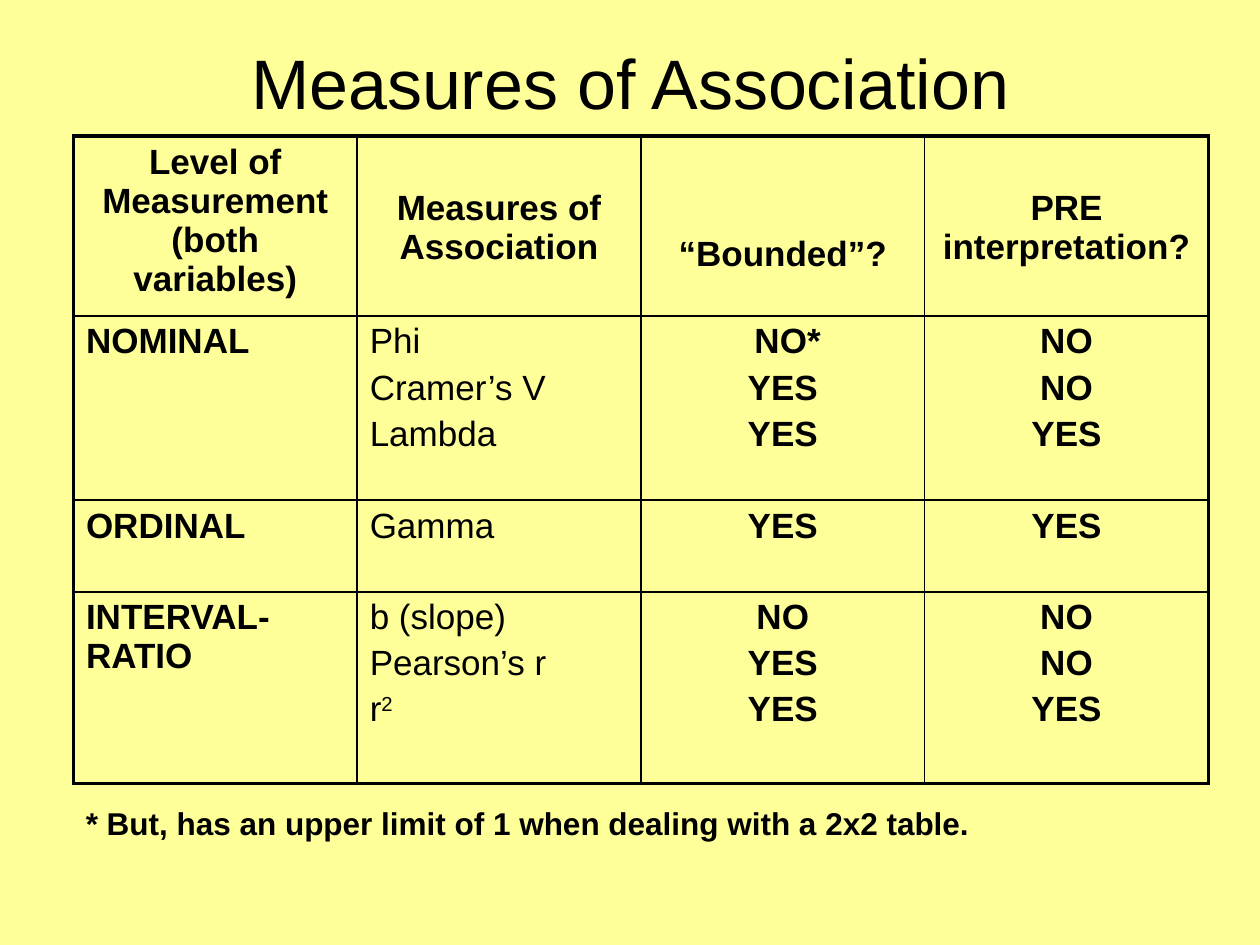
from lxml.etree import SubElement as Sub
from pptx import Presentation
from pptx.dml.color import RGBColor
from pptx.enum.text import MSO_ANCHOR as Anchor, PP_ALIGN as Align
from pptx.oxml.ns import qn
from pptx.util import Cm, Pt

HEAD = ["Level of Measurement (both variables)", "Measures of Association",
        "“Bounded”?", "PRE interpretation?"]
DROPS = [0, 1, 2, 1]  # lines by which each heading is lowered
BODY = [
    ["NOMINAL", "Phi\nCramer’s V\nLambda", " NO*\nYES\nYES", "NO\nNO\nYES"],
    ["ORDINAL", "Gamma", "YES", "YES"],
    ["INTERVAL-RATIO", "b (slope)\nPearson’s r\nr2", "NO\nYES\nYES", "NO\nNO\nYES"],
]
HEIGHTS = [3.63, 3.71, 1.85, 3.86]
WIDTH = 5.72
PITCH = 0.93  # one line and its gap


def color(code):
    return RGBColor.from_string(code)


class Deck:
    face = "Arial"
    ink = "000000"
    paper = "FFFF99"
    thin, thick = 1, 2.25

    def __init__(self):
        self.prs = Presentation()
        self.prs.slide_width, self.prs.slide_height = Cm(25.4), Cm(19.05)
        self.slide = self.prs.slides.add_slide(self.prs.slide_layouts[5])
        fill = self.slide.background.fill
        fill.solid()
        fill.fore_color.rgb = color(self.paper)

    def style(self, run, size, bold):
        font = run.font
        font.name, font.size, font.bold = self.face, Pt(size), bold
        font.color.rgb = color(self.ink)

    def label(self, frame, text, size, bold=False, align=Align.LEFT, gap=0):
        frame.text = text
        for par in frame.paragraphs:
            par.alignment = align
            par.space_before = Pt(gap)
            for run in par.runs:
                self.style(run, size, bold)

    def title(self, text, x, y, w, h):
        shape = self.slide.shapes.title
        shape.left, shape.top, shape.width, shape.height = map(Cm, (x, y, w, h))
        shape.text_frame.vertical_anchor = Anchor.MIDDLE
        self.label(shape.text_frame, text, 40, align=Align.CENTER)

    def note(self, text, x, y, w, h):
        box = self.slide.shapes.add_textbox(*map(Cm, (x, y, w, h)))
        self.label(box.text_frame, text, 18, bold=True)

    def edge(self, cell, side, width):
        props = cell._tc.get_or_add_tcPr()
        line = Sub(props, qn("a:ln" + side), w=str(Pt(width)))
        Sub(Sub(line, qn("a:solidFill")), qn("a:srgbClr"), val=self.ink)

    def table(self, rows, x, y):
        tall, wide = len(rows), len(rows[0])
        grid = self.slide.shapes.add_table(
            tall, wide, Cm(x), Cm(y), Cm(WIDTH * wide), Cm(sum(HEIGHTS))).table
        grid.first_row = grid.horz_banding = False
        for col in grid.columns:
            col.width = Cm(WIDTH)
        for i, row in enumerate(rows):
            grid.rows[i].height = Cm(HEIGHTS[i])
            for j, text in enumerate(row):
                cell = grid.cell(i, j)
                mid = i == 0 or j > 1
                self.label(cell.text_frame, text, 20, bold=i == 0 or j != 1,
                           align=Align.CENTER if mid else Align.LEFT, gap=4)
                outer = {"L": j == 0, "R": j == wide - 1,
                         "T": i == 0, "B": i == tall - 1}
                for side, out in outer.items():
                    self.edge(cell, side, self.thick if out else self.thin)
                cell.fill.background()
        return grid

    def power(self, par, size):
        """Raise the last character of a paragraph."""
        run = par.runs[0]
        base, mark = run.text[:-1], run.text[-1]
        run.text = base
        top = par.add_run()
        top.text = mark
        self.style(top, size, False)
        top._r.get_or_add_rPr().set("baseline", "30000")


def main():
    deck = Deck()
    deck.title("Measures of Association", 1.27, 0.76, 22.86, 1.78)
    grid = deck.table([HEAD] + BODY, 1.48, 2.74)
    for j, drop in enumerate(DROPS):
        grid.cell(0, j).margin_top = Cm(0.13 + PITCH * drop)
    deck.power(grid.cell(3, 1).text_frame.paragraphs[-1], 20)
    deck.note("* But, has an upper limit of 1 when dealing with a 2x2 table.",
              1.48, 16.08, 18.34, 1.02)
    deck.prs.save("out.pptx")


if __name__ == "__main__":
    main()
